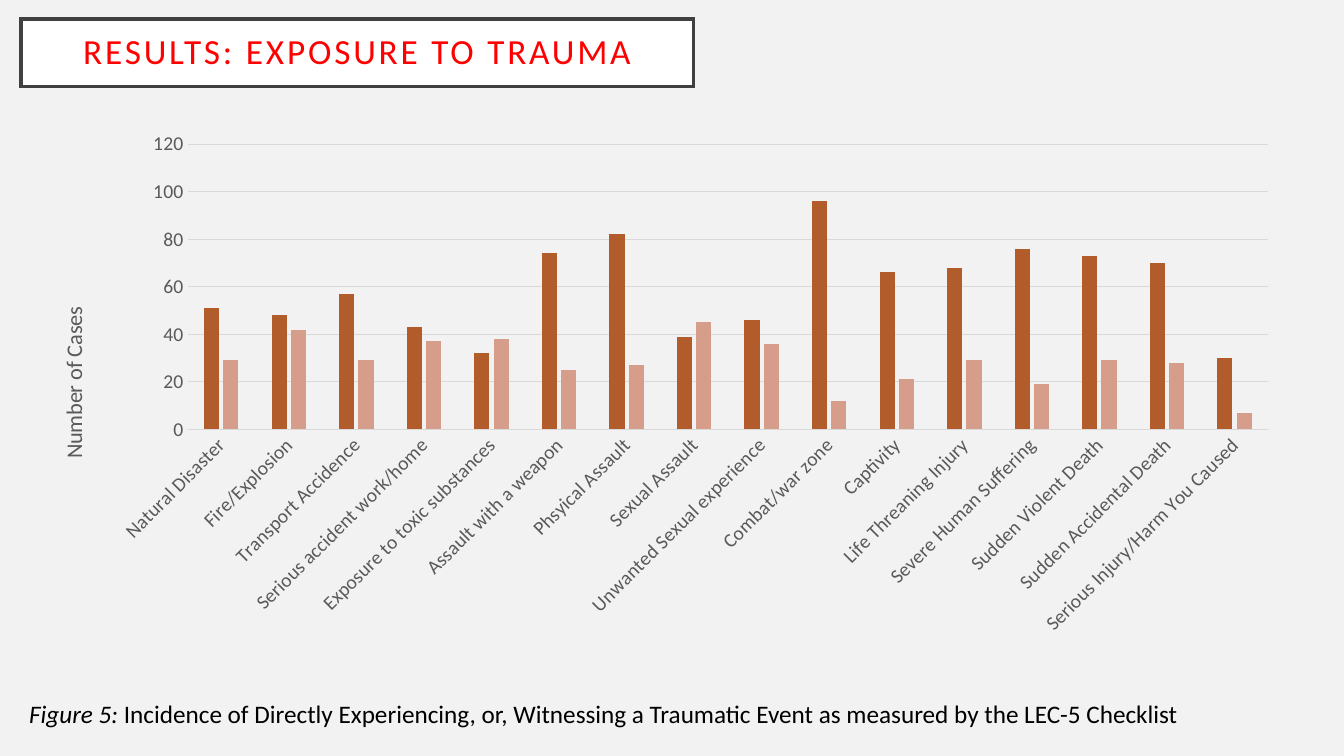
from lxml.etree import SubElement
from pptx import Presentation
from pptx.chart.data import CategoryChartData
from pptx.dml.color import RGBColor
from pptx.enum.chart import XL_CHART_TYPE, XL_TICK_MARK
from pptx.enum.shapes import MSO_SHAPE
from pptx.enum.text import MSO_ANCHOR, PP_ALIGN
from pptx.oxml import parse_xml
from pptx.oxml.ns import nsdecls, qn
from pptx.util import Inches, Pt

BACKGROUND = RGBColor(0xF2, 0xF2, 0xF2)
WHITE = RGBColor(0xFF, 0xFF, 0xFF)
BLACK = RGBColor(0, 0, 0)
RED = RGBColor(0xFF, 0, 0)
FRAME = RGBColor(0x40, 0x40, 0x40)
AXIS_TEXT = RGBColor(0x59, 0x59, 0x59)
GRID = RGBColor(0xD9, 0xD9, 0xD9)
RUST = RGBColor(0xB2, 0x5B, 0x2B)
ROSE = RGBColor(0xD7, 0x9D, 0x8B)
FONT = "Calibri"

EVENTS = [
    ("Natural Disaster", 51, 29),
    ("Fire/Explosion", 48, 42),
    ("Transport Accidence", 57, 29),
    ("Serious accident work/home", 43, 37),
    ("Exposure to toxic substances", 32, 38),
    ("Assault with a weapon", 74, 25),
    ("Phsyical Assault", 82, 27),
    ("Sexual Assault", 39, 45),
    ("Unwanted Sexual experience", 46, 36),
    ("Combat/war zone", 96, 12),
    ("Captivity", 66, 21),
    ("Life Threaning Injury", 68, 29),
    ("Severe Human Suffering", 76, 19),
    ("Sudden Violent Death", 73, 29),
    ("Sudden Accidental Death", 70, 28),
    ("Serious Injury/Harm You Caused", 30, 7),
]


def style_font(font, size, color):
    font.name = FONT
    font.size = Pt(size)
    font.bold = False
    font.color.rgb = color


def manual_layout(**values):
    layout = parse_xml(f"<c:layout {nsdecls('c')}/>")
    manual = SubElement(layout, qn("c:manualLayout"))
    for tag, value in values.items():
        SubElement(manual, qn(f"c:{tag}")).set("val", str(value))
    return layout


def replace_layout(parent, index, layout):
    for old in parent.findall(qn("c:layout")):
        parent.remove(old)
    parent.insert(index, layout)


def add_title(slide, left, top, width, height):
    sp = slide.shapes.add_shape(MSO_SHAPE.RECTANGLE, left, top, width, height)
    sp.shadow.inherit = False
    sp.fill.solid()
    sp.fill.fore_color.rgb = WHITE
    sp.line.color.rgb = FRAME
    sp.line.width = Pt(2.5)
    SubElement(sp.line._get_or_add_ln(), qn("a:miter")).set("lim", "800000")
    tf = sp.text_frame
    tf.word_wrap = True
    tf.vertical_anchor = MSO_ANCHOR.MIDDLE
    tf.margin_left = tf.margin_right = tf.margin_top = tf.margin_bottom = Inches(0.2)
    p = tf.paragraphs[0]
    p.alignment = PP_ALIGN.CENTER
    p.line_spacing = 0.9
    style_font(p.font, 25.2, RED)
    r = p.add_run()
    r.text = "RESULTS: EXPOSURE TO TRAUMA"
    r.font._element.set("spc", "200")


def add_exposure_chart(slide, left, top, width, height):
    events, experienced, witnessed = zip(*EVENTS)
    data = CategoryChartData()
    data.categories = events
    data.add_series("Experienced", experienced)
    data.add_series("Witnessed", witnessed)
    chart = slide.shapes.add_chart(
        XL_CHART_TYPE.COLUMN_CLUSTERED, left, top, width, height, data
    ).chart
    chart.has_legend = False
    chart.has_title = False
    style_font(chart.font, 10, BLACK)

    plot = chart.plots[0]
    plot.vary_by_categories = False
    plot.gap_width = 219
    plot.overlap = -27
    for series, color in zip(plot.series, (RUST, ROSE)):
        series.format.fill.solid()
        series.format.fill.fore_color.rgb = color

    cat_axis, val_axis = chart.category_axis, chart.value_axis
    for axis in (cat_axis, val_axis):
        axis.major_tick_mark = axis.minor_tick_mark = XL_TICK_MARK.NONE
        style_font(axis.tick_labels.font, 14, AXIS_TEXT)
    body = cat_axis._element.find(qn("c:txPr")).find(qn("a:bodyPr"))
    body.set("rot", "-2700000")
    body.set("vert", "horz")
    val_axis.minimum_scale, val_axis.maximum_scale = 0, 120
    val_axis.major_unit = 20
    val_axis.format.line.fill.background()
    for line in (cat_axis.format.line, val_axis.major_gridlines.format.line):
        line.color.rgb = GRID
        line.width = Pt(0.75)

    title = val_axis.axis_title
    tf = title.text_frame
    tf.text = "Number of Cases"
    style_font(tf.paragraphs[0].font, 16, AXIS_TEXT)
    body = tf._element.find(qn("a:bodyPr"))
    body.set("rot", "-5400000")
    body.set("vert", "horz")
    replace_layout(title._element, 1, manual_layout(
        xMode="edge", yMode="edge",
        x=Inches(0.18) / width, y=Inches(1.81) / height))
    replace_layout(chart._chartSpace.chart.plotArea, 0, manual_layout(
        layoutTarget="inner", xMode="edge", yMode="edge",
        x=Inches(1.5) / width, y=Inches(0.24) / height,
        w=Inches(10.72) / width, h=Inches(2.83) / height))


def add_caption(slide, left, top, width, height):
    tf = slide.shapes.add_textbox(left, top, width, height).text_frame
    tf.word_wrap = True
    p = tf.paragraphs[0]
    style_font(p.font, 18, BLACK)
    r = p.add_run()
    r.text = "Figure 5: "
    r.font.italic = True
    p.add_run().text = (
        "Incidence of Directly Experiencing, or, Witnessing a Traumatic Event "
        "as measured by the LEC-5 Checklist"
    )


def main():
    prs = Presentation()
    prs.slide_width, prs.slide_height = Inches(13.33), Inches(7.5)
    slide = prs.slides.add_slide(prs.slide_layouts[6])
    slide.background.fill.solid()
    slide.background.fill.fore_color.rgb = BACKGROUND
    add_title(slide, Inches(0.21), Inches(0.19), Inches(6.67), Inches(0.67))
    add_exposure_chart(slide, Inches(0.36), Inches(1.19), Inches(12.47), Inches(5.65))
    add_caption(slide, Inches(0.19), Inches(6.88), Inches(12.1), Inches(0.4))
    prs.save("out.pptx")


if __name__ == "__main__":
    main()
